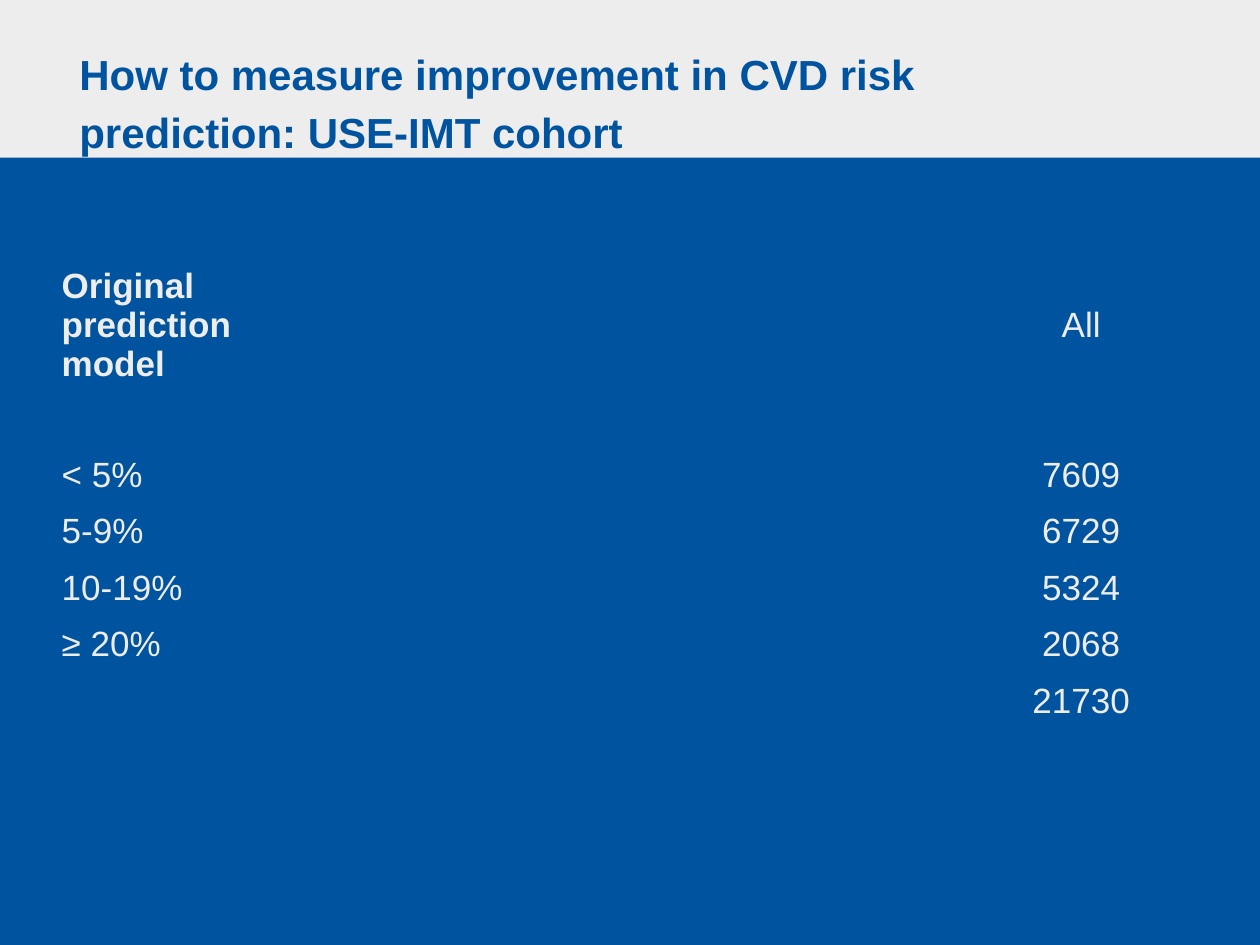
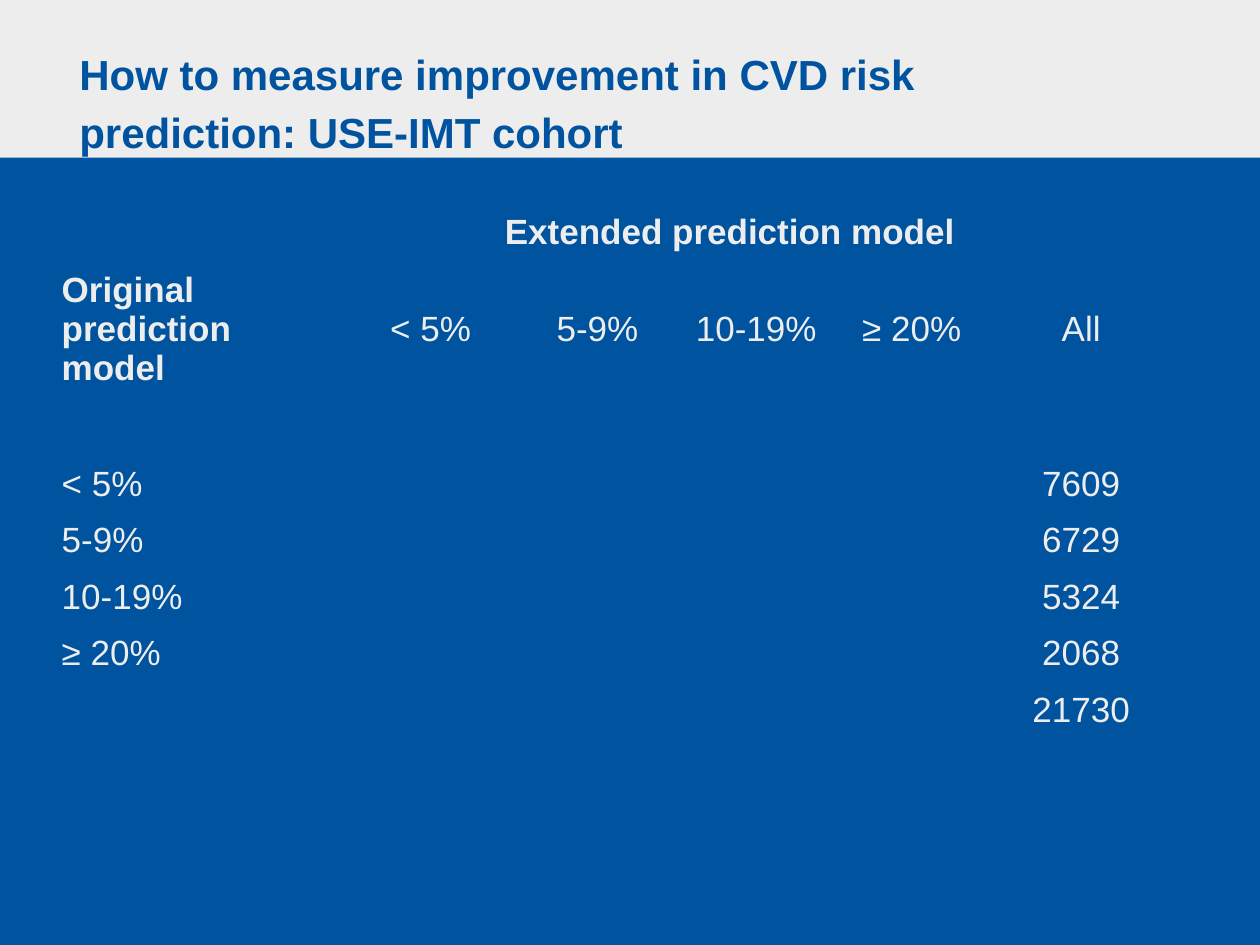
import dataclasses

import pptx
import pptx.dml.color
import pptx.enum.shapes
import pptx.enum.text
import pptx.util

Cm = pptx.util.Cm
Pt = pptx.util.Pt
RGB = pptx.dml.color.RGBColor
ALIGN = pptx.enum.text.PP_ALIGN
MIDDLE = pptx.enum.text.MSO_ANCHOR.MIDDLE

TITLE = "How to measure improvement in CVD risk prediction: USE-IMT cohort"
SIDE = "Original prediction model"
TOP = "Extended prediction model"
RISKS = ["< 5%", "5-9%", "10-19%", "≥ 20%"]
COUNTS = ["7609", "6729", "5324", "2068"]
TOTAL = "21730"
SLIDES = [{"extended": False}, {"extended": True}]

COLS = [5.99, 3.4, 3.33, 3.07, 3.2, 3.63]
ROWS = [1.14, 2.62] + [1.14] * 6
NO_GRID = "{2D5ABB26-0587-4C30-8999-92F81FD0307C}"


@dataclasses.dataclass(frozen=True)
class Theme:
    blue: RGB = RGB.from_string("00539F")
    pale: RGB = RGB.from_string("EDEDED")
    font: str = "Arial"
    head: int = 24
    body: int = 20


THEME = Theme()


def write(frame, text, size=THEME.body, color=THEME.pale, bold=False,
          align=ALIGN.LEFT, leading=None):
    para = frame.paragraphs[0]
    para.alignment = align
    if leading:
        para.line_spacing = Pt(leading)
    run = para.add_run()
    run.text = text
    font = run.font
    font.name, font.size, font.bold = THEME.font, Pt(size), bold
    font.color.rgb = color


def add_band(slide):
    band = slide.shapes.add_shape(pptx.enum.shapes.MSO_SHAPE.RECTANGLE,
                                  0, Cm(3.18), Cm(25.4), Cm(15.87))
    band.shadow.inherit = False
    band.fill.solid()
    band.fill.fore_color.rgb = THEME.blue
    band.line.fill.background()


def add_title(slide):
    box = slide.shapes.add_textbox(Cm(1.35), Cm(0.71), Cm(18.57), Cm(2.62))
    box.text_frame.word_wrap = True
    write(box.text_frame, TITLE, size=THEME.head, color=THEME.blue,
          bold=True, leading=33)


def add_grid(slide, extended):
    """Add the risk table; the extended one also names its model columns."""
    frame = slide.shapes.add_table(len(ROWS), len(COLS), Cm(0.99), Cm(4.11),
                                   Cm(sum(COLS)), Cm(sum(ROWS)))
    table = frame.table
    table.first_row = table.horz_banding = False
    table._tbl.tblPr[0].text = NO_GRID
    for col, width in zip(table.columns, COLS):
        col.width = Cm(width)
    for row, height in zip(table.rows, ROWS):
        row.height = Cm(height)
    for cell in table.iter_cells():
        cell.fill.background()
        cell.vertical_anchor = MIDDLE
    table.cell(0, 1).merge(table.cell(0, 4))

    def put(row, col, text, bold=False):
        align = ALIGN.CENTER if col else ALIGN.LEFT
        write(table.cell(row, col).text_frame, text, bold=bold, align=align)

    last = len(COLS) - 1
    put(1, 0, SIDE, bold=True)
    put(1, last, "All")
    for row, (risk, count) in enumerate(zip(RISKS, COUNTS), 3):
        put(row, 0, risk)
        put(row, last, count)
    put(len(ROWS) - 1, last, TOTAL)
    if extended:
        table.cell(0, 1).margin_left = Cm(2.72)
        put(0, 1, TOP, bold=True)
        for col, risk in enumerate(RISKS, 1):
            put(1, col, risk)


def main():
    deck = pptx.Presentation()
    deck.slide_width, deck.slide_height = Cm(25.4), Cm(19.05)
    back = deck.slide_master.background.fill
    back.solid()
    back.fore_color.rgb = THEME.pale
    for page in SLIDES:
        slide = deck.slides.add_slide(deck.slide_layouts[6])
        add_band(slide)
        add_grid(slide, page["extended"])
        add_title(slide)
    deck.save("out.pptx")


if __name__ == "__main__":
    main()
